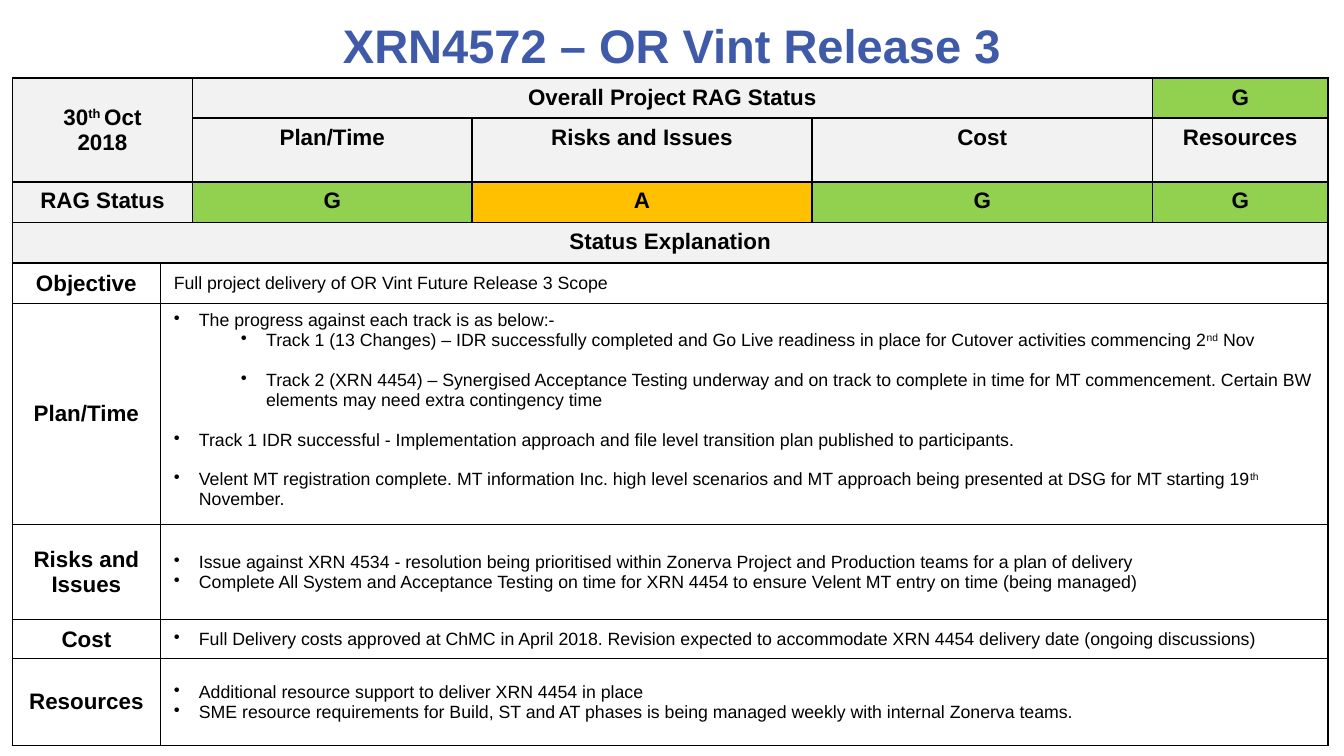
from dataclasses import dataclass

import lxml.etree
import pptx
import pptx.dml.color
import pptx.enum.text
import pptx.oxml
import pptx.oxml.ns
import pptx.util

Pt = pptx.util.Pt
Align = pptx.enum.text.PP_ALIGN
Anchor = pptx.enum.text.MSO_ANCHOR
qn = pptx.oxml.ns.qn

COLOURS = {
    "title": "3E5AA8",
    "text": "000000",
    "border": "000000",
    "heading": "F2F2F2",
    "plain": "FFFFFF",
    "G": "92D050",
    "A": "FFC000",
}
FONT = "Arial"
HEADING_SIZE = 12
BODY_SIZE = 9.5
LINE_GAP = 10.7
BULLET_HANG = 13.5
LEVEL_STEP = 36

COLUMN_WIDTHS = [79.2, 17.2, 149.8, 182.1, 182.4, 94]
ROW_HEIGHTS = [21.5, 33.8, 21.8, 21.6, 21.8, 118.4, 51, 20.9, 46.6]


@dataclass(frozen=True)
class Line:
    text: str
    level: int = 0
    bullet: bool = True
    gap: float = 0


@dataclass(frozen=True)
class Heading:
    row: int
    column: int
    lines: tuple[str, ...]
    fill: str = "heading"
    rows: int = 1
    columns: int = 1
    anchor: Anchor = Anchor.TOP


@dataclass(frozen=True)
class Section:
    title: str
    lines: tuple[Line, ...]
    anchor: Anchor = Anchor.MIDDLE


HEADINGS = [
    Heading(0, 0, ("30^th ^Oct", "2018"), rows=2, columns=2, anchor=Anchor.MIDDLE),
    Heading(0, 2, ("Overall Project RAG Status",), columns=3),
    Heading(0, 5, ("G",), "G"),
    Heading(2, 0, ("RAG Status",), columns=2),
    Heading(3, 0, ("Status Explanation",), columns=6),
]
RATINGS = [("Plan/Time", "G"), ("Risks and Issues", "A"), ("Cost", "G"), ("Resources", "G")]

SECTIONS = [
    Section("Objective", (
        Line("Full project delivery of OR Vint Future Release 3 Scope", bullet=False),
    )),
    Section("Plan/Time", (
        Line("The progress against each track is as below:-"),
        Line("Track 1 (13 Changes) – IDR successfully completed and Go Live readiness "
             "in place for Cutover activities commencing 2^nd^ Nov", level=1),
        Line("Track 2 (XRN 4454) – Synergised Acceptance Testing underway and on track "
             "to complete in time for MT commencement. Certain BW elements may need "
             "extra contingency time", level=1, gap=LINE_GAP),
        Line("Track 1 IDR successful - Implementation approach and file level transition "
             "plan published to participants.", gap=LINE_GAP),
        Line("Velent MT registration complete. MT information Inc. high level scenarios "
             "and MT approach being presented at DSG for MT starting 19^th^ November.",
             gap=LINE_GAP),
    ), Anchor.TOP),
    Section("Risks and Issues", (
        Line("Issue against XRN 4534 - resolution being prioritised within Zonerva "
             "Project and Production teams for a plan of delivery"),
        Line("Complete All System and Acceptance Testing on time for XRN 4454 to ensure "
             "Velent MT entry on time (being managed)"),
    )),
    Section("Cost", (
        Line("Full Delivery costs approved at ChMC in April 2018. Revision expected to "
             "accommodate XRN 4454 delivery date (ongoing discussions)"),
    )),
    Section("Resources", (
        Line("Additional resource support to deliver XRN 4454 in place"),
        Line("SME resource requirements for Build, ST and AT phases is being managed "
             "weekly with internal Zonerva teams."),
    )),
]


def rgb(key: str) -> pptx.dml.color.RGBColor:
    return pptx.dml.color.RGBColor.from_string(COLOURS[key])


def write_runs(paragraph, text: str, size: float, bold: bool, colour: str = "text") -> None:
    for position, part in enumerate(text.split("^")):
        run = paragraph.add_run()
        run.text = part
        run.font.name = FONT
        run.font.size = Pt(size)
        run.font.bold = bold
        run.font.color.rgb = rgb(colour)
        if position % 2:
            run._r.get_or_add_rPr().set("baseline", "30000")


def paragraph_at(frame, index: int):
    return frame.add_paragraph() if index else frame.paragraphs[0]


def style_cell(cell, fill: str) -> None:
    properties = cell._tc.get_or_add_tcPr()
    for side in ("a:lnL", "a:lnR", "a:lnT", "a:lnB"):
        edge = lxml.etree.SubElement(properties, qn(side), w=str(Pt(1)))
        paint = lxml.etree.SubElement(edge, qn("a:solidFill"))
        lxml.etree.SubElement(paint, qn("a:srgbClr"), val=COLOURS["border"])
    cell.fill.solid()
    cell.fill.fore_color.rgb = rgb(fill)
    cell.margin_left = cell.margin_right = Pt(7.2)
    cell.margin_top = cell.margin_bottom = Pt(3.6)


def draw_heading(table, heading: Heading) -> None:
    cell = table.cell(heading.row, heading.column)
    last_row = heading.row + heading.rows
    last_column = heading.column + heading.columns
    if heading.rows * heading.columns > 1:
        cell.merge(table.cell(last_row - 1, last_column - 1))
    for row in range(heading.row, last_row):
        for column in range(heading.column, last_column):
            style_cell(table.cell(row, column), heading.fill)
    cell.vertical_anchor = heading.anchor
    for index, text in enumerate(heading.lines):
        paragraph = paragraph_at(cell.text_frame, index)
        paragraph.alignment = Align.CENTER
        write_runs(paragraph, text, HEADING_SIZE, True)


def draw_section(table, row: int, section: Section) -> None:
    draw_heading(table, Heading(row, 0, (section.title,), "plain", anchor=Anchor.MIDDLE))
    cell = table.cell(row, 1)
    cell.merge(table.cell(row, 5))
    for column in range(1, 6):
        style_cell(table.cell(row, column), "plain")
    cell.vertical_anchor = section.anchor
    for index, line in enumerate(section.lines):
        paragraph = paragraph_at(cell.text_frame, index)
        paragraph.level = line.level
        if line.gap:
            paragraph.space_before = Pt(line.gap)
        if line.bullet:
            properties = paragraph._p.get_or_add_pPr()
            properties.set("marL", str(Pt(BULLET_HANG + line.level * LEVEL_STEP)))
            properties.set("indent", str(Pt(-BULLET_HANG)))
            lxml.etree.SubElement(properties, qn("a:buChar"), char="•")
        write_runs(paragraph, line.text, BODY_SIZE, False)


def draw_title(slide, text: str) -> None:
    frame = slide.shapes.add_textbox(Pt(36), Pt(10), Pt(648), Pt(28)).text_frame
    frame.word_wrap = True
    frame.vertical_anchor = Anchor.MIDDLE
    frame.paragraphs[0].alignment = Align.CENTER
    write_runs(frame.paragraphs[0], text, 25.2, True, "title")


def draw_status_table(slide) -> None:
    table = slide.shapes.add_table(
        len(ROW_HEIGHTS), len(COLUMN_WIDTHS), Pt(6.7), Pt(41.8),
        Pt(sum(COLUMN_WIDTHS)), Pt(sum(ROW_HEIGHTS))).table
    table.first_row = table.horz_banding = False
    for column, width in zip(table.columns, COLUMN_WIDTHS):
        column.width = Pt(width)
    for row, height in zip(table.rows, ROW_HEIGHTS):
        row.height = Pt(height)
    for heading in HEADINGS:
        draw_heading(table, heading)
    for column, (area, rating) in enumerate(RATINGS, start=2):
        draw_heading(table, Heading(1, column, (area,)))
        draw_heading(table, Heading(2, column, (rating,), rating))
    for row, section in enumerate(SECTIONS, start=4):
        draw_section(table, row, section)


def main() -> None:
    presentation = pptx.Presentation()
    presentation.slide_width = Pt(720)
    presentation.slide_height = Pt(405)
    slide = presentation.slides.add_slide(presentation.slide_layouts[6])
    draw_status_table(slide)
    draw_title(slide, "XRN4572 – OR Vint Release 3")
    presentation.save("out.pptx")


if __name__ == "__main__":
    main()
